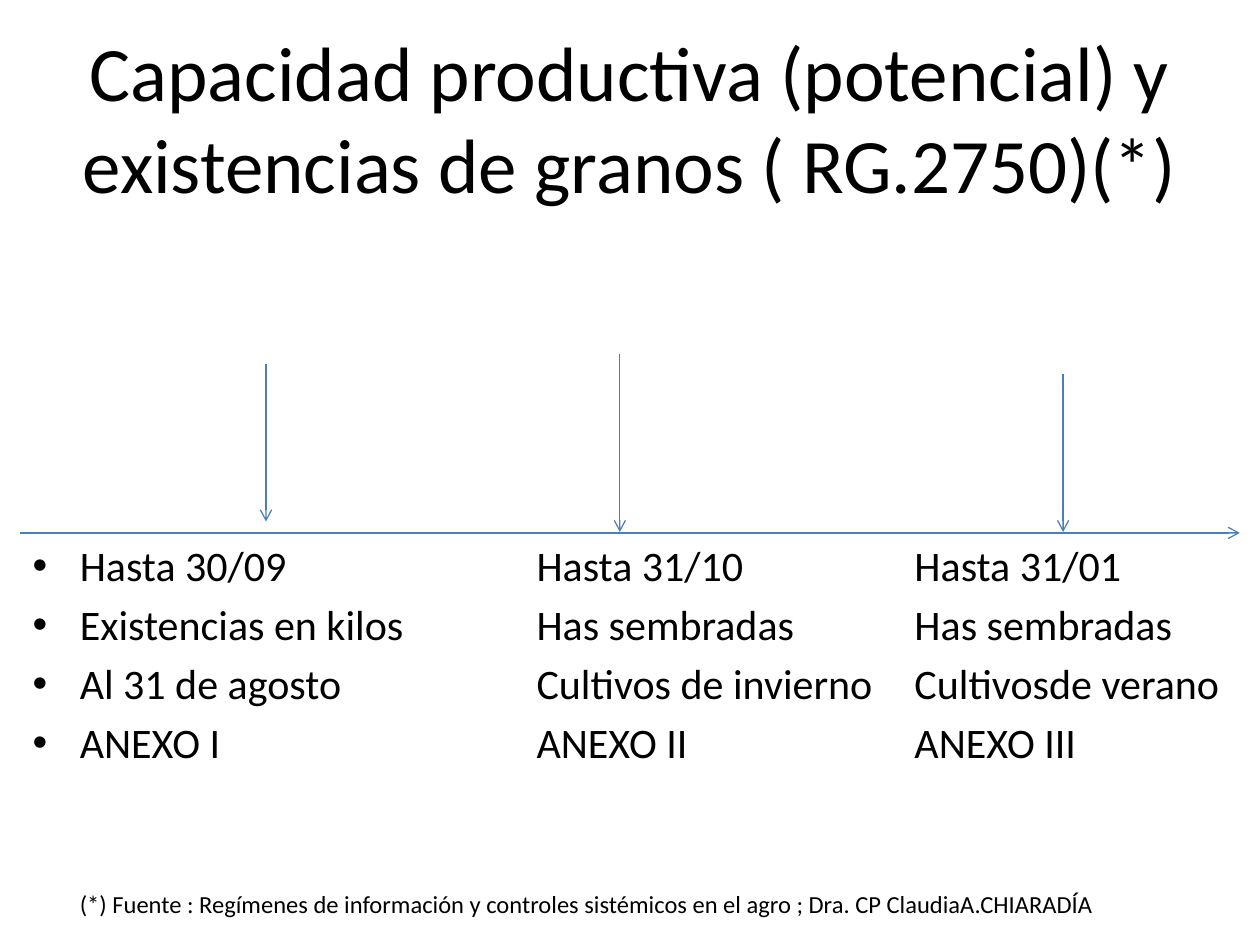
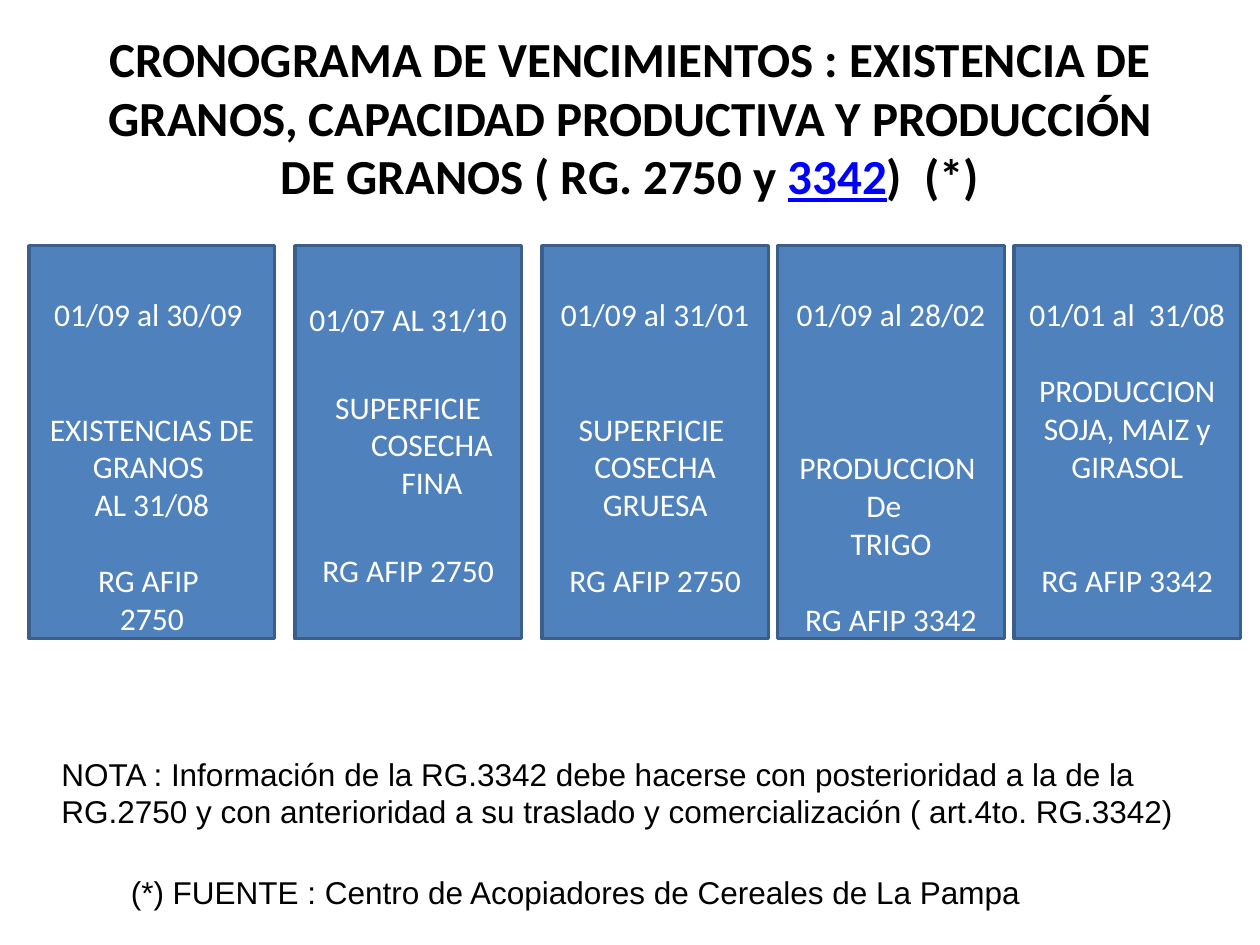
from dataclasses import dataclass
from typing import Any

from pptx import Presentation
from pptx.dml.color import RGBColor
from pptx.enum import shapes, text
from pptx.oxml import ns, xmlchemy
from pptx.util import Pt

BLACK, WHITE, LINK_BLUE = "000000", "FFFFFF", "0000FF"
CARD_FILL, CARD_EDGE, ARROW_BLUE = "4F81BD", "3A5F8C", "4B7EBC"
CARD_TOP, CARD_HEIGHT = 140.4, 224.6
BLANK_LINE = 22
TITLE_ONLY = 5


def rgb(value):
    return RGBColor.from_string(value)


def add_xml(parent, tag, **attributes):
    element = xmlchemy.OxmlElement(tag)
    for name, value in attributes.items():
        element.set(name, value)
    parent.append(element)
    return element


def hang(paragraph, indent, bullet=None):
    """Give the paragraph a hanging indent and, if wanted, a bullet."""
    properties = paragraph._p.get_or_add_pPr()
    properties.set("marL", str(Pt(indent)))
    properties.set("indent", str(-Pt(indent)))
    if bullet:
        add_xml(properties, "a:buFont", typeface="Arial")
        add_xml(properties, "a:buChar", char=bullet)


@dataclass
class Deck:
    presentation: Any
    font: str = "Calibri"
    slide: Any = None

    def run(self, paragraph, words, size, color=BLACK, font=None, bold=False, underline=False):
        run = paragraph.add_run()
        run.text = words
        run.font.name = font or self.font
        run.font.size = Pt(size)
        run.font.bold = bold
        run.font.underline = underline
        run.font.color.rgb = rgb(color)

    def paragraphs(self, frame, lines, size, align=text.PP_ALIGN.LEFT, **style):
        """Fill the frame with (words, space before) pairs."""
        for index, (words, space) in enumerate(lines):
            paragraph = frame.paragraphs[0] if index == 0 else frame.add_paragraph()
            paragraph.alignment = align
            paragraph.space_before = Pt(space)
            self.run(paragraph, words, size, **style)
        return frame.paragraphs

    def new_slide(self, title_runs, size, bold=False):
        layout = self.presentation.slide_layouts[TITLE_ONLY]
        self.slide = self.presentation.slides.add_slide(layout)
        title = self.slide.shapes.title
        title.left, title.top, title.width, title.height = Pt(36), Pt(21.6), Pt(648), Pt(90)
        frame = title.text_frame
        frame.word_wrap = True
        frame.auto_size = text.MSO_AUTO_SIZE.NONE
        frame.vertical_anchor = text.MSO_ANCHOR.MIDDLE
        paragraph = frame.paragraphs[0]
        paragraph.alignment = text.PP_ALIGN.CENTER
        for words, color, underline in title_runs:
            self.run(paragraph, words, size, color, bold=bold, underline=underline)

    def text_box(self, left, top, width, height, lines, size, wrap=True, **style):
        box = self.slide.shapes.add_textbox(Pt(left), Pt(top), Pt(width), Pt(height))
        box.text_frame.word_wrap = wrap
        return self.paragraphs(box.text_frame, lines, size, **style)

    def arrow(self, x1, y1, x2, y2):
        connector = self.slide.shapes.add_connector(
            shapes.MSO_CONNECTOR.STRAIGHT, Pt(x1), Pt(y1), Pt(x2), Pt(y2))
        connector.line.color.rgb = rgb(ARROW_BLUE)
        connector.line.width = Pt(0.75)
        properties = connector._element.spPr
        add_xml(properties.find(ns.qn("a:ln")), "a:tailEnd", type="arrow")
        add_xml(properties, "a:effectLst")

    def card(self, left, width, text_top, lines, indent=0):
        card = self.slide.shapes.add_shape(
            shapes.MSO_SHAPE.RECTANGLE, Pt(left), Pt(CARD_TOP), Pt(width), Pt(CARD_HEIGHT))
        card.shadow.inherit = False
        card.fill.solid()
        card.fill.fore_color.rgb = rgb(CARD_FILL)
        card.line.color.rgb = rgb(CARD_EDGE)
        card.line.width = Pt(2)
        frame = card.text_frame
        frame.word_wrap = True
        frame.vertical_anchor = text.MSO_ANCHOR.TOP
        frame.margin_top, frame.margin_bottom = Pt(text_top), 0
        for paragraph in self.paragraphs(frame, lines, 18, text.PP_ALIGN.CENTER, color=WHITE):
            if indent:
                hang(paragraph, indent)


def timeline_slide(deck):
    deck.new_slide([("Capacidad productiva (potencial) y existencias de granos ( RG.2750)(*)",
                     BLACK, False)], 44)
    columns = [
        (11.5, 270, "•", ["Hasta 30/09", "Existencias en kilos", "Al 31 de agosto", "ANEXO I"]),
        (299.5, 215, None, ["Hasta 31/10", "Has sembradas", "Cultivos de invierno", "ANEXO II"]),
        (515.5, 200, None, ["Hasta 31/01", "Has sembradas", "Cultivosde verano", "ANEXO III"]),
    ]
    for left, width, bullet, entries in columns:
        lines = [(entry, 4.8 if index else 0) for index, entry in enumerate(entries)]
        for paragraph in deck.text_box(left, 305, width, 140, lines, 24):
            if bullet:
                hang(paragraph, 27, bullet)
    deck.text_box(38.5, 504.5, 660, 25, [(
        "(*) Fuente : Regímenes de información y controles sistémicos en el agro ; "
        "Dra. CP ClaudiaA.CHIARADÍA", 0)], 14)
    deck.arrow(11.5, 304.5, 708.5, 304.5)
    for x, top, bottom in [(152, 208, 298), (354.2, 202.5, 304), (607.5, 214, 304)]:
        deck.arrow(x, top, x, bottom)


def schedule_slide(deck):
    deck.new_slide([
        ("CRONOGRAMA DE VENCIMIENTOS : EXISTENCIA DE GRANOS, CAPACIDAD PRODUCTIVA "
         "Y PRODUCCIÓN DE GRANOS ( RG. 2750 y ", BLACK, False),
        ("3342", LINK_BLUE, True),
        (")  (*)", BLACK, False)], 28, bold=True)
    deck.card(16.6, 140.4, 28, [
        ("01/09 al 30/09 ", 0), ("EXISTENCIAS DE GRANOS ", 2 * BLANK_LINE), ("AL 31/08", 0),
        ("RG AFIP ", BLANK_LINE), ("2750", 0)])
    deck.card(168.5, 129.6, 31, [
        ("01/07 AL 31/10", 0), ("SUPERFICIE COSECHA FINA", 28.5), ("RG AFIP 2750", 28.5)],
        indent=27)
    deck.card(309.6, 129.6, 28, [
        ("01/09 al 31/01", 0), ("SUPERFICIE ", 2 * BLANK_LINE), ("COSECHA GRUESA", 0),
        ("RG AFIP 2750", BLANK_LINE)])
    deck.card(444.4, 129.6, 28, [
        ("01/09 al 28/02", 0), ("PRODUCCION ", 3 * BLANK_LINE), ("De  ", 0), ("TRIGO", 0),
        ("RG AFIP 3342", BLANK_LINE)])
    deck.card(579.4, 129.6, 28, [
        ("01/01 al  31/08", 0), ("PRODUCCION SOJA, MAIZ y GIRASOL", BLANK_LINE),
        ("RG AFIP 3342", 2 * BLANK_LINE)])
    deck.text_box(28, 427.7, 680.4, 51, [(
        "NOTA : Información de la RG.3342 debe hacerse con posterioridad a la de la RG.2750 "
        "y con anterioridad a su traslado y comercialización ( art.4to. RG.3342)", 0)],
        18, font="Arial")
    deck.text_box(67.7, 495.4, 527.8, 29, [(
        "(*) FUENTE : Centro de Acopiadores de Cereales de La Pampa", 0)],
        18, wrap=False, font="Arial")


def main():
    presentation = Presentation()
    presentation.slide_width, presentation.slide_height = Pt(720), Pt(540)
    deck = Deck(presentation)
    timeline_slide(deck)
    schedule_slide(deck)
    presentation.save("out.pptx")


if __name__ == "__main__":
    main()
